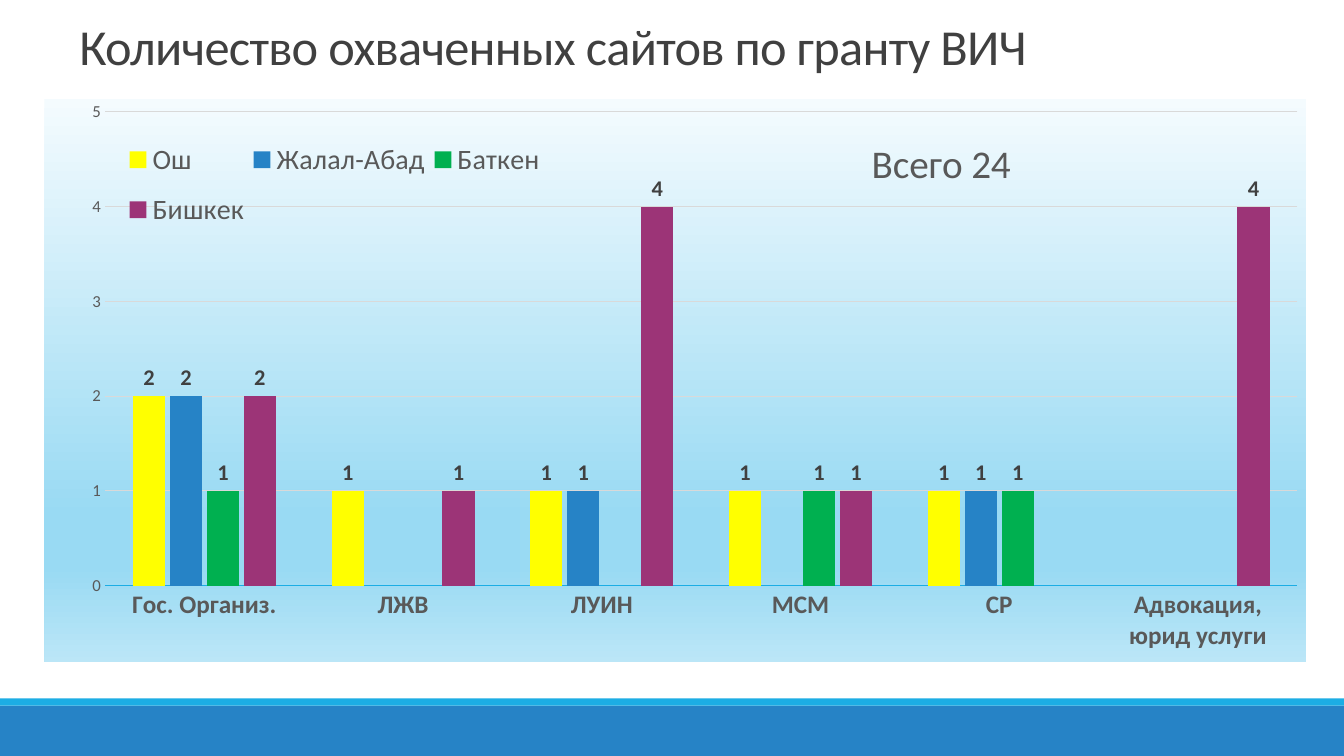
import lxml.etree
import pptx
import pptx.chart.data
import pptx.dml.color
import pptx.enum.chart
import pptx.enum.shapes
import pptx.enum.text
import pptx.oxml
import pptx.oxml.ns
import pptx.util

Cm = pptx.util.Cm
qn = pptx.oxml.ns.qn

HUES = {
    "text": "404040", "soft": "595959", "grid": "D9D9D9",
    "blue": "2683C6", "cyan": "1CADE4", "gold": "FFFF00",
    "green": "00B050", "plum": "9C3477",
}
FADE = [(0, "F4FBFE"), (74, "99DAF3"), (83, "99DAF3"), (100, "BBE6F7")]
GROUPS = ["Гос. Организ.", "ЛЖВ", "ЛУИН", "МСМ", "СР", "Адвокация, юрид услуги"]
TOWNS = [
    ("Ош", "gold", [2, 1, 1, 1, 1, None]),
    ("Жалал-Абад", "blue", [2, None, 1, None, 1, None]),
    ("Баткен", "green", [1, None, None, 1, 1, None]),
    ("Бишкек", "plum", [2, 1, 4, 1, None, 4]),
]


def tint(key):
    return pptx.dml.color.RGBColor.from_string(HUES[key])


def style(font, size, hue="soft", bold=False):
    font.name = "Calibri"
    font.size = pptx.util.Pt(size)
    font.bold = bold
    font.color.rgb = tint(hue)


def write(frame, text, space=None, lead=None, **form):
    line = frame.paragraphs[0]
    if lead:
        line.line_spacing = lead
    run = line.add_run()
    run.text = text
    style(run.font, **form)
    if space:
        run._r.get_or_add_rPr().set("spc", str(round(space * 100)))


def place(node, index, **spots):
    for old in node.findall(qn("c:layout")):
        node.remove(old)
    layout = lxml.etree.Element(qn("c:layout"))
    manual = lxml.etree.SubElement(layout, qn("c:manualLayout"))
    if "w" in spots and index == 0:
        lxml.etree.SubElement(manual, qn("c:layoutTarget")).set("val", "inner")
    for key in ("x", "y"):
        lxml.etree.SubElement(manual, qn(f"c:{key}Mode")).set("val", "edge")
    for key, part in spots.items():
        lxml.etree.SubElement(manual, qn(f"c:{key}")).set("val", str(part / 100))
    node.insert(index, layout)


def shade(chart):
    stops = "".join(
        f'<a:gs pos="{spot * 1000}"><a:srgbClr val="{hue}"/></a:gs>' for spot, hue in FADE
    )
    fill = pptx.oxml.parse_xml(
        f'<c:spPr {pptx.oxml.ns.nsdecls("c", "a")}><a:gradFill rotWithShape="1">'
        f'<a:gsLst>{stops}</a:gsLst><a:lin ang="5400000" scaled="0"/></a:gradFill>'
        "<a:ln><a:noFill/></a:ln></c:spPr>"
    )
    chart._chartSpace.find(qn("c:chart")).addnext(fill)


class Deck:
    def __init__(self):
        self.show = pptx.Presentation()
        self.show.slide_width = Cm(33.87)
        self.show.slide_height = Cm(19.05)
        self.slide = self.show.slides.add_slide(self.show.slide_layouts[6])

    def band(self, top, tall, hue):
        kind = pptx.enum.shapes.MSO_SHAPE.RECTANGLE
        band = self.slide.shapes.add_shape(kind, 0, Cm(top), self.show.slide_width, Cm(tall))
        band.shadow.inherit = False
        band.fill.solid()
        band.fill.fore_color.rgb = tint(hue)
        band.line.fill.background()

    def title(self, text, left, top, wide, tall):
        box = self.slide.shapes.add_textbox(Cm(left), Cm(top), Cm(wide), Cm(tall))
        frame = box.text_frame
        frame.word_wrap = True
        frame.vertical_anchor = pptx.enum.text.MSO_ANCHOR.BOTTOM
        write(frame, text, size=36, hue="text", space=-0.5, lead=0.85)

    def chart(self, text, left, top, wide, tall):
        enum = pptx.enum.chart
        data = pptx.chart.data.CategoryChartData()
        data.categories = GROUPS
        for name, _, counts in TOWNS:
            data.add_series(name, counts)
        chart = self.slide.shapes.add_chart(
            enum.XL_CHART_TYPE.COLUMN_CLUSTERED, Cm(left), Cm(top), Cm(wide), Cm(tall), data
        ).chart
        style(chart.font, 10)
        shade(chart)
        chart.has_title = True
        write(chart.chart_title.text_frame, text, size=28)
        place(chart.chart_title._element, 1, x=65, y=5.5)
        self.bars(chart.plots[0])
        self.axes(chart)
        chart.has_legend = True
        chart.legend.position = enum.XL_LEGEND_POSITION.TOP
        chart.legend.include_in_layout = False
        style(chart.legend.font, 20)
        place(chart.legend._element, 1, x=6, y=5, w=34, h=20.5)
        area = chart._chartSpace.find(qn("c:chart")).find(qn("c:plotArea"))
        place(area, 0, x=4.8, y=2.3, w=94.5, h=84.1)

    def bars(self, plot):
        plot.gap_width = 173
        plot.overlap = -15
        plot.vary_by_categories = False
        for bar, (_, hue, _) in zip(plot.series, TOWNS):
            bar.format.fill.solid()
            bar.format.fill.fore_color.rgb = tint(hue)
            bar.invert_if_negative = False
            tags = bar.data_labels
            tags.show_value = True
            tags.position = pptx.enum.chart.XL_LABEL_POSITION.OUTSIDE_END
            style(tags.font, 16, "text", True)

    def axes(self, chart):
        none = pptx.enum.chart.XL_TICK_MARK.NONE
        base, scale = chart.category_axis, chart.value_axis
        for axis in (base, scale):
            axis.major_tick_mark = axis.minor_tick_mark = none
        style(base.tick_labels.font, 18, bold=True)
        style(scale.tick_labels.font, 12)
        scale.minimum_scale, scale.maximum_scale, scale.major_unit = 0, 5, 1
        scale.format.line.fill.background()
        scale.has_major_gridlines = True
        for line, hue in ((base.format.line, "cyan"), (scale.major_gridlines.format.line, "grid")):
            line.width = pptx.util.Pt(0.75)
            line.color.rgb = tint(hue)


def main():
    deck = Deck()
    deck.band(17.78, 1.27, "blue")
    deck.band(17.6, 0.18, "cyan")
    deck.title("Количество охваченных сайтов по гранту ВИЧ", 1.75, 0, 29.24, 2.03)
    deck.chart("Всего 24", 1.12, 2.49, 31.8, 14.2)
    deck.show.save("out.pptx")


if __name__ == "__main__":
    main()
